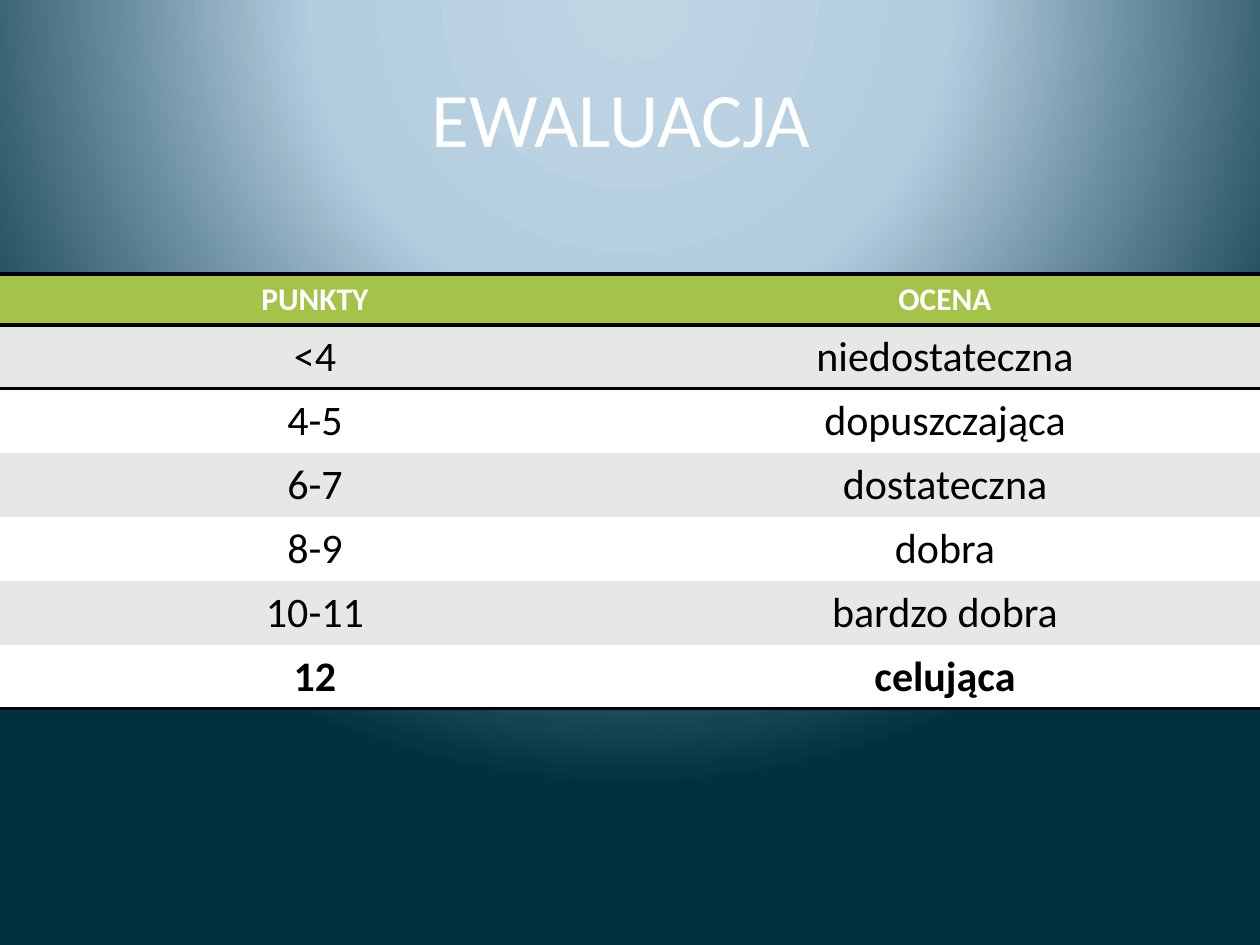
"""Build the EWALUACJA slide: a title above a table of points and grades."""
from dataclasses import dataclass

from pptx import Presentation
from pptx.dml.color import RGBColor
from pptx.enum.text import MSO_ANCHOR, PP_ALIGN
from pptx.oxml import parse_xml
from pptx.oxml.ns import nsdecls
from pptx.util import Emu, Pt

CENTER = PP_ALIGN.CENTER
MIDDLE = MSO_ANCHOR.MIDDLE
PX = 914400 / 126
NO_GRID_STYLE = "{2D5ABB26-0587-4C30-8999-92F81FD0307C}"


@dataclass(frozen=True)
class Theme:
    font: str = "Calibri"
    white: str = "FFFFFF"
    black: str = "000000"
    green: str = "A5C249"
    band: str = "E7E7E7"
    glow: tuple = ((0, "BFD5E4"), (40, "B4CEE0"), (100, "00313F"))
    title_size: int = 44
    header_size: int = 18
    body_size: int = 24
    rule_width: int = 2


theme = Theme()


def px(length):
    return Emu(round(length * PX))


def write(frame, text, size, color, bold=False):
    frame.text = text
    para = frame.paragraphs[0]
    para.alignment = CENTER
    font = para.runs[0].font
    font.name = theme.font
    font.size = Pt(size)
    font.bold = bold
    font.color.rgb = RGBColor.from_string(color)


deck = Presentation()
deck.slide_width, deck.slide_height = px(1260), px(945)
page = deck.slides.add_slide(deck.slide_layouts[6])

stops = "".join(
    f'<a:gs pos="{place * 1000}"><a:srgbClr val="{color}"/></a:gs>'
    for place, color in theme.glow
)
backdrop = parse_xml(
    f'<p:bg {nsdecls("p", "a")}><p:bgPr><a:gradFill rotWithShape="1">'
    f'<a:gsLst>{stops}</a:gsLst><a:path path="circle">'
    '<a:fillToRect l="50000" t="-80000" r="50000" b="180000"/></a:path>'
    "</a:gradFill><a:effectLst/></p:bgPr></p:bg>"
)
page.element.cSld.insert(0, backdrop)

title = page.shapes.add_textbox(px(63), px(38), px(1134), px(157))
title.text_frame.word_wrap = True
title.text_frame.vertical_anchor = MIDDLE
write(title.text_frame, "EWALUACJA ", theme.title_size, theme.white)

grades = [
    ("PUNKTY", "OCENA"),
    ("<4", "niedostateczna"),
    ("4-5", "dopuszczająca"),
    ("6-7", "dostateczna"),
    ("8-9", "dobra"),
    ("10-11", "bardzo dobra"),
    ("12", "celująca"),
]
last = len(grades) - 1
header_height, row_height = 51, 64
table_height = header_height + last * row_height
frame = page.shapes.add_table(
    len(grades), 2, px(0), px(274), px(1260), px(table_height)
)
table = frame.table
table.horz_banding = False
table.first_row = False
frame.element.find(".//{*}tableStyleId").text = NO_GRID_STYLE

for row, labels in enumerate(grades):
    header = row == 0
    table.rows[row].height = px(header_height if header else row_height)
    fill = theme.green if header else (theme.white, theme.band)[row % 2]
    size = theme.header_size if header else theme.body_size
    color = theme.white if header else theme.black
    edges = {0: ("lnT", "lnB"), 1: ("lnT",), last: ("lnB",)}.get(row, ())
    for column, label in enumerate(labels):
        cell = table.cell(row, column)
        write(cell.text_frame, label, size, color, row in (0, last))
        cell.fill.solid()
        cell.fill.fore_color.rgb = RGBColor.from_string(fill)
        for order, edge in enumerate(edges):
            line = parse_xml(
                f'<a:{edge} {nsdecls("a")} w="{Pt(theme.rule_width)}">'
                f'<a:solidFill><a:srgbClr val="{theme.black}"/></a:solidFill>'
                f"</a:{edge}>"
            )
            cell._tc.get_or_add_tcPr().insert(order, line)

deck.save("out.pptx")
